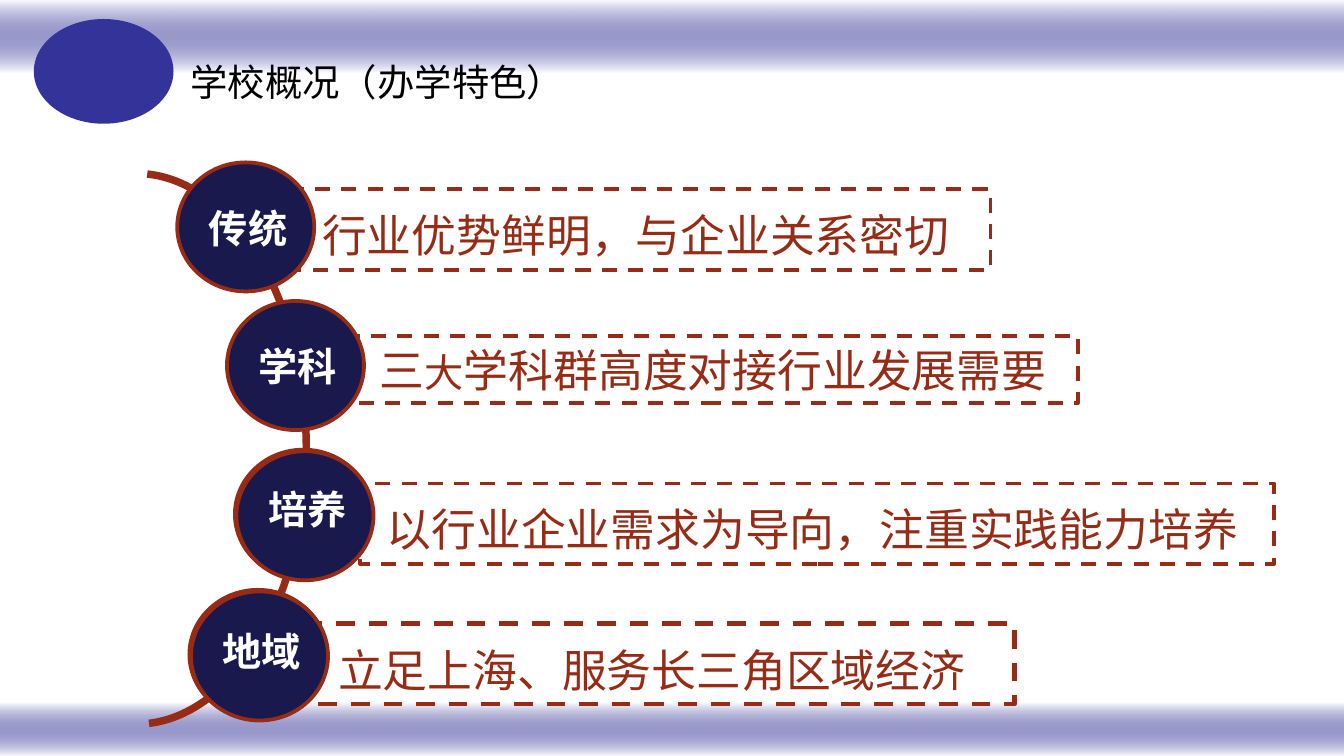
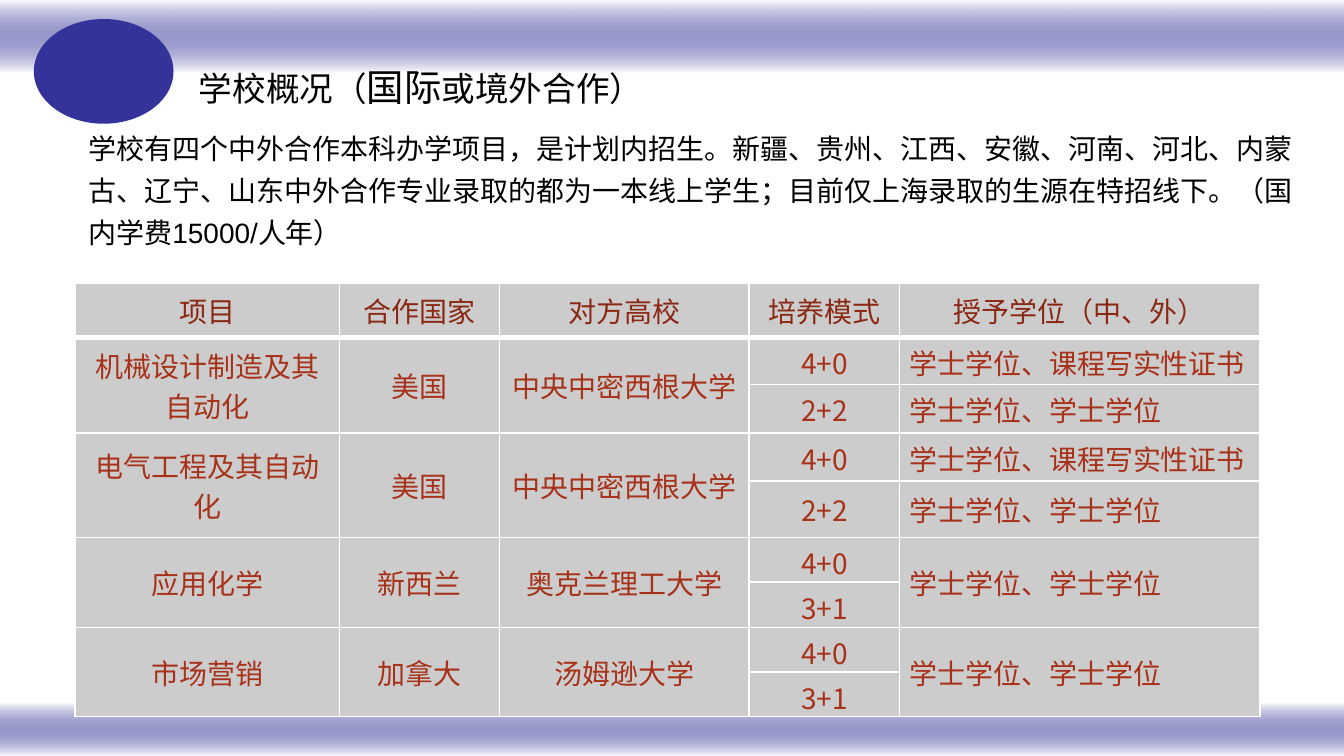
from pptx import Presentation
from pptx.dml.color import RGBColor
from pptx.enum.dml import MSO_LINE_DASH_STYLE as Dash
from pptx.enum.shapes import MSO_SHAPE as Shape
from pptx.enum.text import MSO_ANCHOR as Anchor, PP_ALIGN as Align
from pptx.oxml import parse_xml
from pptx.oxml.ns import nsdecls, qn
from pptx.util import Cm, Pt

SLIDE_W, SLIDE_H = 25.4, 14.29
CJK, LATIN = "Noto Sans CJK SC", "Arial"
COLORS = {
    "white": "FFFFFF", "black": "000000", "band": "333399", "navy": "19194D",
    "rust": "962B16", "header": "8A2814", "body": "A73119", "cell": "CCCCCC",
}

# Features: circle (left, top), label drop, box (left, top, width, height),
# text inset at the top, line width, text runs
FEATURES = [
    ("传统", (3.35, 3.07), 0.66, (5.59, 3.58, 13.13, 1.52), 0.2, 2,
     [("行业优势鲜明，与企业关系密切", 24)]),
    ("学科", (4.29, 5.69), 0.66, (6.68, 6.35, 13.69, 1.27), 0, 2,
     [("三", 24), ("大", 21), ("学科群高度对接行业发展需要", 24)]),
    ("培养", (4.47, 8.53), 0.51, (6.81, 9.14, 17.27, 1.52), 0.2, 2,
     [("以行业企业需求为导向，注重实践能力培养", 24)]),
    ("地域", (3.61, 11.18), 0.56, (5.89, 11.79, 13.28, 1.52), 0.2, 2.5,
     [("立足上海、服务长三角区域经济", 24)]),
]
CIRCLE_W, CIRCLE_H = 2.59, 2.44

HEADERS = ["项目", "合作国家", "对方高校", "培养模式", "授予学位（中、外）"]
CERTIFICATE, DEGREE = "学士学位、课程写实性证书", "学士学位、学士学位"
PROGRAMMES = [
    ("机械设计制造及其\n自动化", "美国", "中央中密西根大学",
     ("4+0", "2+2"), (CERTIFICATE, DEGREE)),
    ("电气工程及其自动化", "美国", "中央中密西根大学",
     ("4+0", "2+2"), (CERTIFICATE, DEGREE)),
    ("应用化学", "新西兰", "奥克兰理工大学", ("4+0", "3+1"), (DEGREE,)),
    ("市场营销", "加拿大", "汤姆逊大学", ("4+0", "3+1"), (DEGREE,)),
]
COLUMN_WIDTHS = [5, 3.02, 4.72, 2.84, 6.81]
ROW_HEIGHTS = [1.02, 0.89, 0.91, 0.91, 1.07, 0.84, 0.86, 0.84, 0.84]


def rgb(color):
    return RGBColor.from_string(COLORS[color])


def style_run(run, size, color, bold=False, latin=CJK):
    run.font.size, run.font.bold, run.font.name = Pt(size), bold, latin
    run.font.color.rgb = rgb(color)
    east_asian = parse_xml(f'<a:ea {nsdecls("a")} typeface="{CJK}"/>')
    run.font._element.find(qn("a:latin")).addnext(east_asian)


def add_runs(paragraph, parts, color, bold=False):
    """Each part is (text, size) or (text, size, latin font)."""
    for text, size, *latin in parts:
        run = paragraph.add_run()
        run.text = text
        style_run(run, size, color, bold, *latin)


def add_figure(slide, kind, box, fill=None, line=None, width=2):
    figure = slide.shapes.add_shape(kind, *map(Cm, box))
    figure.shadow.inherit = False
    if fill:
        figure.fill.solid()
        figure.fill.fore_color.rgb = rgb(fill)
    else:
        figure.fill.background()
    if line:
        figure.line.color.rgb = rgb(line)
        figure.line.width = Pt(width)
    else:
        figure.line.fill.background()
    return figure


def add_text(slide, box, parts, color="black", bold=False, anchor=Anchor.MIDDLE):
    frame = slide.shapes.add_textbox(*map(Cm, box)).text_frame
    frame.word_wrap, frame.vertical_anchor = True, anchor
    add_runs(frame.paragraphs[0], parts, color, bold)
    return frame


# Shared frame: bands, emblem and title
def add_band(slide, box):
    band = add_figure(slide, Shape.RECTANGLE, box)
    band.fill.gradient()
    band.fill.gradient_angle = 270
    stops = band._element.spPr.find(".//" + qn("a:gsLst"))
    for stop in list(stops):
        stops.remove(stop)
    for position, color, alpha in ((0, "white", 100), (50, "band", 50), (100, "white", 100)):
        stops.append(parse_xml(
            f'<a:gs {nsdecls("a")} pos="{position * 1000}">'
            f'<a:srgbClr val="{COLORS[color]}"><a:alpha val="{alpha * 1000}"/>'
            f'</a:srgbClr></a:gs>'))


def add_framed_slide(deck, title_box, title):
    slide = deck.slides.add_slide(deck.slide_layouts[6])
    add_band(slide, (0, 13.29, SLIDE_W, 1))
    add_band(slide, (0, 0, SLIDE_W, 1.37))
    add_figure(slide, Shape.OVAL, (0.64, 0.36, 2.64, 1.98), fill="band")
    add_text(slide, title_box, title)
    return slide


# Feature list along an arc
def add_statement(slide, box, inset_top, width, parts):
    statement = add_figure(slide, Shape.RECTANGLE, box, line="rust", width=width)
    statement.line.dash_style = Dash.DASH
    frame = statement.text_frame
    frame.word_wrap, frame.vertical_anchor = True, Anchor.MIDDLE
    frame.margin_left, frame.margin_top, frame.margin_bottom = Cm(0.5), Cm(inset_top), 0
    frame.paragraphs[0].alignment = Align.LEFT
    add_runs(frame.paragraphs[0], parts, "rust")


def add_badge(slide, box, label, drop):
    left, top, _, _ = box
    add_figure(slide, Shape.OVAL, box, fill="navy", line="rust")
    add_text(slide, (left + 0.35, top + drop, 2.25, 1.14), [(label, 21)], "white", bold=True)


def add_features(slide, arc_box):
    for _, _, _, box, inset_top, width, parts in FEATURES:
        add_statement(slide, box, inset_top, width, parts)

    # Rings that thicken the outline of the lower two circles
    for _, (left, top), *_ in FEATURES[2:]:
        ring = (left - 0.03, top - 0.03, CIRCLE_W, CIRCLE_H)
        add_figure(slide, Shape.OVAL, ring, line="rust")

    arc = add_figure(slide, Shape.ARC, arc_box, line="rust", width=4)
    arc.adjustments[0], arc.adjustments[1] = 163.38, 52.4

    for label, (left, top), drop, *_ in FEATURES:
        add_badge(slide, (left, top, CIRCLE_W, CIRCLE_H), label, drop)


# Programme table
def set_borders(cell, bottom):
    properties = cell._tc.get_or_add_tcPr()
    for place, (side, width) in enumerate((("L", 1), ("R", 1), ("T", 1), ("B", bottom))):
        properties.insert(place, parse_xml(
            f'<a:ln{side} {nsdecls("a")} w="{Pt(width)}"><a:solidFill>'
            f'<a:srgbClr val="{COLORS["white"]}"/></a:solidFill></a:ln{side}>'))


def fill_cell(cell, text, color, align=Align.CENTER):
    cell.text_frame.text = text
    for paragraph in cell.text_frame.paragraphs:
        paragraph.alignment = align
        for run in paragraph.runs:
            style_run(run, 15, color)


def add_programmes(slide, left, top):
    box = (left, top, sum(COLUMN_WIDTHS), sum(ROW_HEIGHTS))
    table = slide.shapes.add_table(
        len(ROW_HEIGHTS), len(COLUMN_WIDTHS), *map(Cm, box)).table
    table.first_row = table.horz_banding = False
    for column, width in zip(table.columns, COLUMN_WIDTHS):
        column.width = Cm(width)

    for number, (row, height) in enumerate(zip(table.rows, ROW_HEIGHTS)):
        row.height = Cm(height)
        for cell in row.cells:
            cell.fill.solid()
            cell.fill.fore_color.rgb = rgb("cell")
            cell.vertical_anchor = Anchor.MIDDLE
            cell.margin_left = cell.margin_right = Cm(0.18)
            cell.margin_top = cell.margin_bottom = Cm(0.09)
            set_borders(cell, bottom=1 if number else 3)

    for column, header in enumerate(HEADERS):
        fill_cell(table.cell(0, column), header, "header")

    # Two rows per programme; a single entry spans both
    for index, (name, country, school, modes, degrees) in enumerate(PROGRAMMES):
        first = 1 + 2 * index
        for column, entries in enumerate(((name,), (country,), (school,), modes, degrees)):
            if len(entries) == 1:
                table.cell(first, column).merge(table.cell(first + 1, column))
            align = Align.LEFT if entries is degrees else Align.CENTER
            for offset, entry in enumerate(entries):
                fill_cell(table.cell(first + offset, column), entry, "body", align)


def add_introduction(slide, box):
    frame = add_text(slide, box, [
        ("学校有四个中外合作本科办学项目，是计划内招生。", 15),
        ("新疆、贵州、江西、安徽、河南、河北、内蒙古、辽宁、山东中外合作专业录取的"
         "都为一本线上学生；目前仅上海录取的生源在特招线下。"
         "（国内学费15000/人年）", 15, LATIN),
    ], anchor=Anchor.TOP)
    frame.paragraphs[0].line_spacing = 1.25


def main():
    deck = Presentation()
    deck.slide_width, deck.slide_height = Cm(SLIDE_W), Cm(SLIDE_H)

    features = add_framed_slide(
        deck, (3.35, 0.99, 15.82, 1.12), [("学校概况（办学特色）", 20)])
    add_features(features, (-0.64, 3.28, 6.43, 10.41))

    cooperation = add_framed_slide(
        deck, (3.51, 1.07, 19.1, 1.12),
        [("学校概况（", 18), ("国际", 20), ("或境外合作）", 18)])
    add_programmes(cooperation, 1.42, 5.36)
    add_introduction(cooperation, (1.42, 2.21, 23.3, 3.15))

    deck.save("out.pptx")


if __name__ == "__main__":
    main()
